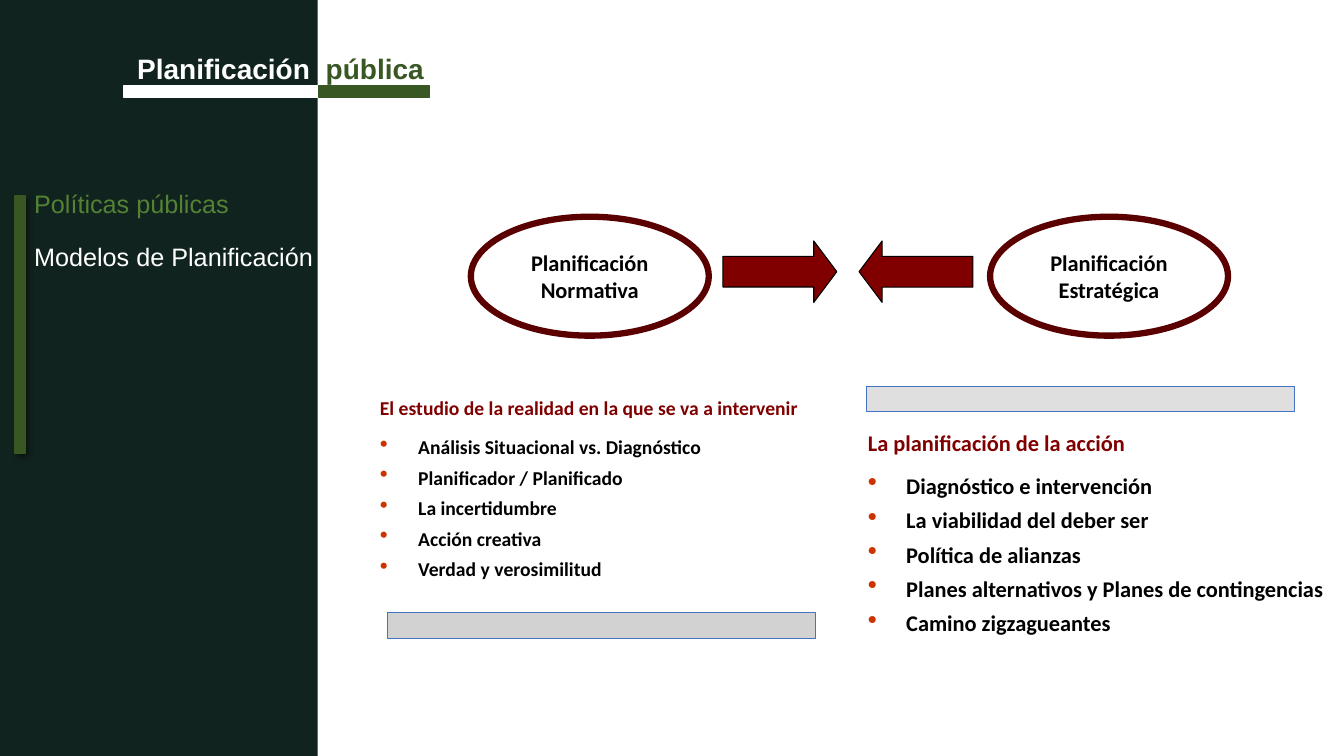
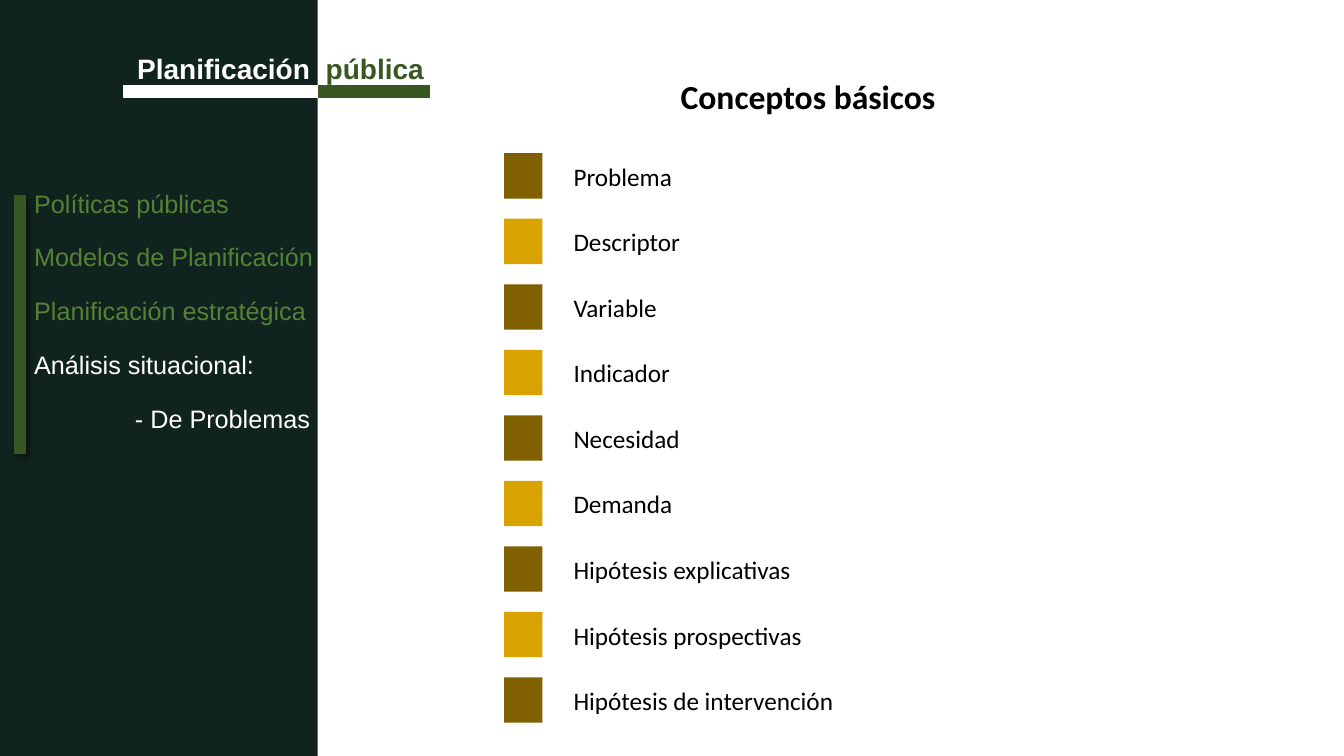
from lxml.etree import SubElement as Sub
from pptx import Presentation
from pptx.dml.color import RGBColor as RGB
from pptx.enum.shapes import MSO_SHAPE as Shape
from pptx.enum.text import MSO_ANCHOR as Anchor, MSO_AUTO_SIZE as Auto, PP_ALIGN as Align
from pptx.oxml.ns import qn
from pptx.util import Inches, Pt

HEX = {
    "white": "FFFFFF", "black": "000000", "panel": "11231E", "green": "385723",
    "past": "548235", "maroon": "800000", "ring": "5A0000", "bullet": "CC3300",
    "grey": "595959", "blue": "4472C4", "brown": "806000", "gold": "D8A300",
}
HEAD = [("Planificación\t", "white"), ("pública", "green")]
MODELS = [("Planificación\nNormativa", 4.67), ("Planificación\nEstratégica", 9.82)]
ARROWS = [(7.17, 0), (8.52, 180)]
LISTS = [
    {
        "head": "El estudio de la realidad en la que se va a intervenir",
        "items": ["Análisis Situacional vs. Diagnóstico", "Planificador / Planificado",
                  "La incertidumbre", "Acción creativa", "Verdad y verosimilitud"],
        "box": (3.67, 3.88, 4.6, 2.1), "size": 14, "lead": 1.0,
        "bar": (3.84, 6.08, 4.25, 0.25), "alpha": 27,
    },
    {
        "head": "La planificación de la acción",
        "items": ["Diagnóstico e intervención", "La viabilidad del deber ser",
                  "Política de alianzas", "Planes alternativos y Planes de contingencias",
                  "Camino zigzagueantes"],
        "box": (8.51, 4.17, 4.82, 2.43), "size": 16, "lead": 1.15,
        "bar": (8.59, 3.83, 4.25, 0.25), "alpha": 19,
    },
]
TOPIC = "Conceptos básicos"
TERMS = ["Problema", "Descriptor", "Variable", "Indicador", "Necesidad", "Demanda",
         "Hipótesis explicativas", "Hipótesis prospectivas", "Hipótesis de intervención"]
MENU_1 = [("Políticas públicas", "past", 0), ("Modelos de Planificación", "white", 0)]
MENU_2 = [("Políticas públicas", "past", 0), ("Modelos de Planificación", "past", 0),
          ("Planificación estratégica", "past", 0), ("Análisis situacional:", "white", 0),
          ("- De Problemas", "white", 1)]


def color(name):
    return RGB.from_string(HEX[name])


def style(para, size, hue, bold=False, face="Calibri"):
    for run in para.runs:
        font = run.font
        font.name, font.size, font.bold = face, Pt(size), bold
        font.color.rgb = color(hue)


def draw(slide, kind, box, fill, line=None, width=1):
    shape = slide.shapes.add_shape(kind, *map(Inches, box))
    shape.shadow.inherit = False
    shape.fill.solid()
    shape.fill.fore_color.rgb = color(fill)
    if line:
        shape.line.color.rgb = color(line)
        shape.line.width = Pt(width)
    else:
        shape.line.fill.background()
    return shape


def write(slide, box, lines):
    frame = slide.shapes.add_textbox(*map(Inches, box)).text_frame
    frame.word_wrap = True
    frame.text = "\n".join(lines)
    return frame


def fade(node, alpha):
    Sub(node, qn("a:alpha"), val=str(alpha * 1000))


def cast(shape):
    effects = shape._element.spPr.find(qn("a:effectLst"))
    outer = Sub(effects, qn("a:outerShdw"), blurRad=str(Pt(4)), dist=str(Pt(3)),
                dir=str(45 * 60000), algn="tl", rotWithShape="0")
    fade(Sub(outer, qn("a:srgbClr"), val=HEX["black"]), 40)


def dot(para):
    props = para._p.get_or_add_pPr()
    props.set("marL", str(Inches(0.38)))
    props.set("indent", str(Inches(-0.38)))
    Sub(Sub(props, qn("a:buClr")), qn("a:srgbClr"), val=HEX["bullet"])
    Sub(props, qn("a:buSzPct"), val="120000")
    Sub(props, qn("a:buChar"), char="•")


def set_title(slide):
    title = slide.shapes.title
    title.left, title.top, title.width, title.height = map(Inches, (1.36, 0.46, 3.1, 0.44))
    frame = title.text_frame
    frame.auto_size = Auto.NONE
    frame.vertical_anchor = Anchor.TOP
    frame.margin_left = frame.margin_right = 0
    frame.margin_top = frame.margin_bottom = Inches(0.05)
    para = frame.paragraphs[0]
    para.alignment = Align.LEFT
    tabs = Sub(para._p.get_or_add_pPr(), qn("a:tabLst"))
    Sub(tabs, qn("a:tab"), pos=str(Inches(1.87)), algn="l")
    for text, hue in HEAD:
        run = para.add_run()
        run.text = text
    style(para, 20, "white", True, "Arial")
    for run, (text, hue) in zip(para.runs, HEAD):
        run.font.color.rgb = color(hue)
    slide.shapes._spTree.append(title._element)


def frame_page(slide, menu):
    draw(slide, Shape.RECTANGLE, (0, 0, 3.15, 7.5), "panel")
    cast(draw(slide, Shape.RECTANGLE, (0.15, 1.94, 0.1, 2.56), "green", "green"))
    for left, width, hue in [(1.23, 1.93, "white"), (3.16, 1.1, "green")]:
        draw(slide, Shape.RECTANGLE, (left, 0.85, width, 0.12), hue, hue)
    set_title(slide)
    pitch = 38.5
    box = (0.24, 1.58, 3.38, 0.1 + len(menu) * pitch / 72)
    body = write(slide, box, [text for text, hue, level in menu])
    for para, (text, hue, level) in zip(body.paragraphs, menu):
        para.line_spacing = Pt(pitch)
        para._p.get_or_add_pPr().set("marL", str(Inches(level)))
        style(para, 18, hue, face="Arial")


def models(slide):
    for text, left in MODELS:
        oval = draw(slide, Shape.OVAL, (left, 2.15, 2.36, 1.18), "white", "ring", 4.5)
        frame = oval.text_frame
        frame.word_wrap = False
        frame.vertical_anchor = Anchor.MIDDLE
        frame.text = text
        for para in frame.paragraphs:
            para.alignment = Align.CENTER
            style(para, 16, "black", True)
    for left, turn in ARROWS:
        arrow = draw(slide, Shape.RIGHT_ARROW, (left, 2.39, 1.13, 0.61),
                     "maroon", "black", 0.75)
        arrow.adjustments[0], arrow.adjustments[1] = 0.5, 0.375
        arrow.rotation = turn
    for part in LISTS:
        body = write(slide, part["box"], [part["head"]] + part["items"])
        head, *items = body.paragraphs
        for para in body.paragraphs:
            para.space_before = Pt(2.5)
            para.line_spacing = 1.15
            style(para, part["size"], "black", True)
        head.line_spacing = part["lead"]
        head.space_after = Pt(6)
        style(head, part["size"], "maroon", True)
        for para in items:
            dot(para)
        bar = draw(slide, Shape.RECTANGLE, part["bar"], "grey", "blue", 0.5)
        fade(bar._element.spPr.find(qn("a:solidFill"))[0], part["alpha"])


def concepts(slide):
    para = write(slide, (4.68, 0.7, 6.67, 0.5), [TOPIC]).paragraphs[0]
    para.alignment = Align.CENTER
    style(para, 24, "black", True)
    for row, term in enumerate(TERMS):
        top = 1.52 + 0.65 * row
        draw(slide, Shape.RECTANGLE, (5, top, 0.38, 0.45), ("brown", "gold")[row % 2])
        label = write(slide, (5.59, top + 0.03, 3.2, 0.4), [term])
        style(label.paragraphs[0], 18, "black")


def main():
    deck = Presentation()
    deck.slide_width, deck.slide_height = Inches(13.33), Inches(7.5)
    for build, menu in [(models, MENU_1), (concepts, MENU_2)]:
        slide = deck.slides.add_slide(deck.slide_layouts[5])
        build(slide)
        frame_page(slide, menu)
    deck.save("out.pptx")


if __name__ == "__main__":
    main()
